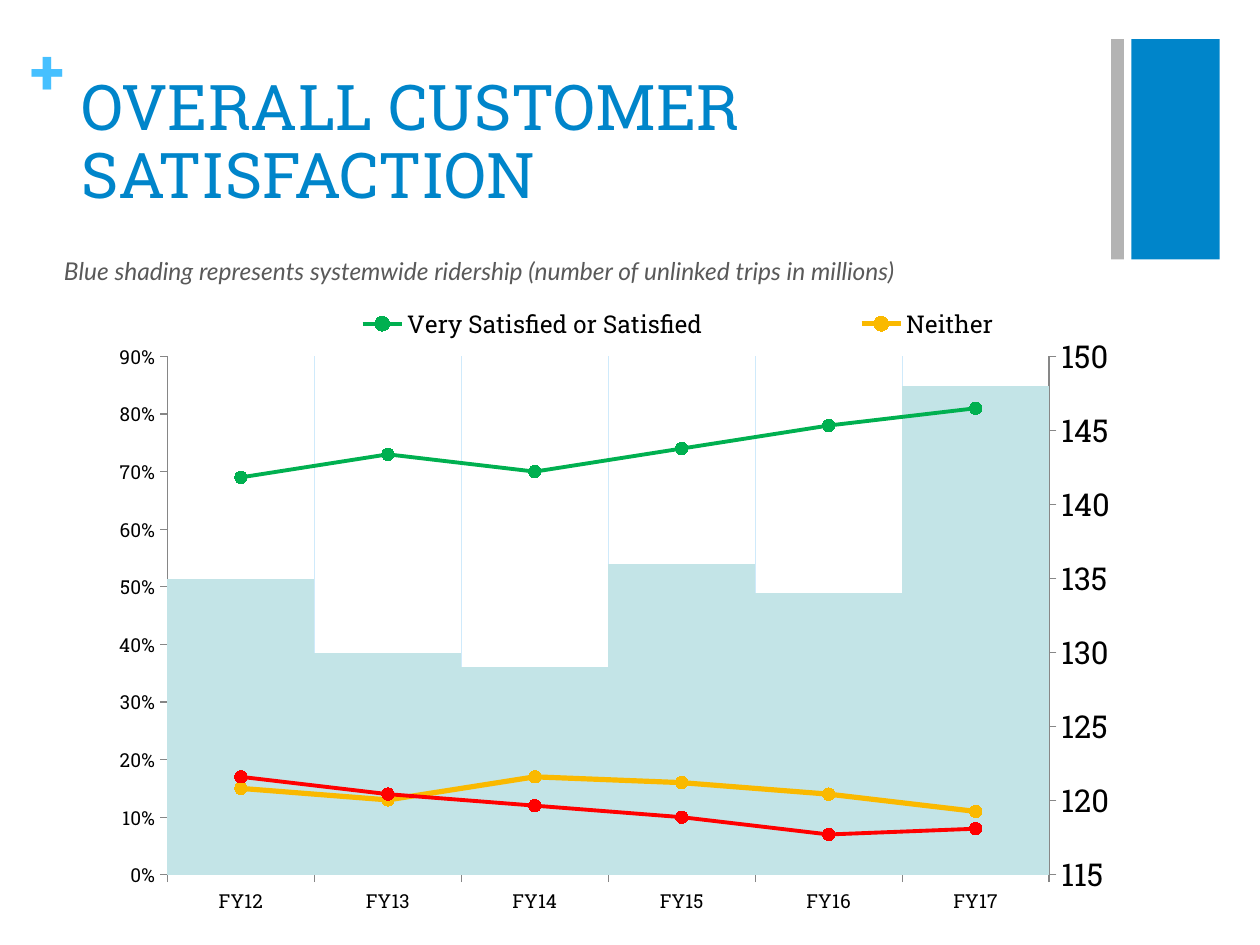
import copy
import pptx
import pptx.chart.axis
import pptx.chart.data
import pptx.dml.color
import pptx.enum.chart
import pptx.enum.shapes
import pptx.enum.text
import pptx.oxml
import pptx.oxml.ns
import pptx.util

Pt = pptx.util.Pt
qn = pptx.oxml.ns.qn
chart_enum = pptx.enum.chart
Anchor = pptx.enum.text.MSO_ANCHOR

THEME = {
    "blue": "0085CA", "sky": "46C0FF", "gray": "B3B3B3", "note": "595959",
    "black": "000000", "axis": "868686", "grid": "CFEAFB", "bars": "C3E4E7",
    "slab": "Roboto Slab", "sans": "Lato",
    "title_size": 36, "note_size": 14, "legend_size": 14, "axis_size": 11,
}

TITLE = "OVERALL CUSTOMER SATISFACTION"
NOTE = "Blue shading represents systemwide ridership (number of unlinked trips in millions)"
BANDS = [("blue", (646.5, 22.3, 50.5, 126)), ("gray", (635, 22.3, 7.3, 126))]
YEARS = ["FY12", "FY13", "FY14", "FY15", "FY16", "FY17"]
RIDERSHIP = ("Series 1", [135, 130, 129, 136, 134, 148])
RATINGS = [
    ("Very Satisfied or Satisfied", [0.69, 0.73, 0.70, 0.74, 0.78, 0.81], "00B050", 2.25),
    ("Neither", [0.15, 0.13, 0.17, 0.16, 0.14, 0.11], "FAB900", 3),
    ("Very Dissatisfied or Dissatisfied", [0.17, 0.14, 0.12, 0.10, 0.07, 0.08], "FF0000", 2.25),
]
PLOT_LAYOUT = {"x": 0.067, "y": 0.102, "w": 0.886, "h": 0.823}
LEGEND_LAYOUT = {"x": 0.18, "y": 0.02, "w": 0.8, "h": 0.06}


def color(name):
    return pptx.dml.color.RGBColor.from_string(THEME.get(name, name))


def apply(target, values):
    for name, value in values.items():
        setattr(target, name, value)


def style_font(font, name, size, fill, **extra):
    apply(font, {"name": THEME[name], "size": Pt(size), **extra})
    font.color.rgb = color(fill)


def style_line(line, fill, width):
    line.color.rgb = color(fill)
    line.width = Pt(width)


def style_fill(fill_format, fill):
    fill_format.solid()
    fill_format.fore_color.rgb = color(fill)


def write(shape, text, box, frame_values, font_values, **extra):
    apply(shape, dict(zip(("left", "top", "width", "height"), map(Pt, box))))
    frame = shape.text_frame
    frame.text = text
    apply(frame, {"word_wrap": True, **frame_values})
    paragraph = frame.paragraphs[0]
    paragraph.alignment = pptx.enum.text.PP_ALIGN.LEFT
    style_font(paragraph.font, *font_values, **extra)
    return paragraph


def chart_element(tag, value=None):
    element = pptx.oxml.parse_xml(f'<c:{tag} {pptx.oxml.ns.nsdecls("c")}/>')
    if value is not None:
        element.set("val", str(value))
    return element


def remove_children(parent, tag):
    for child in parent.findall(qn(f"c:{tag}")):
        parent.remove(child)


def manual_layout(position, inner=False):
    layout = chart_element("layout")
    manual = chart_element("manualLayout")
    layout.append(manual)
    if inner:
        manual.append(chart_element("layoutTarget", "inner"))
    for tag in ("xMode", "yMode"):
        manual.append(chart_element(tag, "edge"))
    for tag, value in position.items():
        manual.append(chart_element(tag, value))
    return layout


def set_value(parent, tag, value):
    parent.find(qn(f"c:{tag}")).set("val", str(value))


def split_lines(plot_area):
    bar_chart = plot_area.find(qn("c:barChart"))
    line_chart = chart_element("lineChart")
    line_chart.append(chart_element("grouping", "standard"))
    line_chart.append(chart_element("varyColors", 0))
    for series in bar_chart.findall(qn("c:ser"))[1:]:
        remove_children(series, "invertIfNegative")
        line_chart.append(series)
    line_chart.append(chart_element("marker", 1))
    bar_chart.addnext(line_chart)

    category = plot_area.find(qn("c:catAx"))
    value = plot_area.find(qn("c:valAx"))
    line_category, line_value = copy.deepcopy(category), copy.deepcopy(value)
    for axis, own, other in ((line_category, 5001, 5002), (line_value, 5002, 5001)):
        set_value(axis, "axId", own)
        set_value(axis, "crossAx", other)
        line_chart.append(chart_element("axId", own))
    value.addnext(line_value)
    line_value.addnext(line_category)
    set_value(line_category, "delete", 1)
    set_value(value, "axPos", "r")
    set_value(value, "crosses", "max")
    return pptx.chart.axis.ValueAxis(line_value)


def style_axis(axis):
    axis.major_tick_mark = chart_enum.XL_TICK_MARK.OUTSIDE
    axis.minor_tick_mark = chart_enum.XL_TICK_MARK.NONE
    style_font(axis.tick_labels.font, "slab", THEME["axis_size"], "black")
    style_line(axis.format.line, "axis", 0.75)


def add_satisfaction_chart(slide):
    data = pptx.chart.data.CategoryChartData()
    data.categories = YEARS
    data.add_series(*RIDERSHIP, number_format="0")
    for name, values, fill, width in RATINGS:
        data.add_series(name, values, number_format="0%")
    chart = slide.shapes.add_chart(
        chart_enum.XL_CHART_TYPE.COLUMN_CLUSTERED,
        Pt(57.6), Pt(167), Pt(576.7), Pt(360), data).chart
    chart.has_title = False
    style_font(chart.font, "slab", 18, "black")
    chart.value_axis.has_major_gridlines = False
    plot_area = chart.element.find(".//" + qn("c:plotArea"))
    rating_axis = split_lines(plot_area)
    remove_children(plot_area, "layout")
    plot_area.insert(0, manual_layout(PLOT_LAYOUT, inner=True))

    bars, lines = chart.plots
    apply(bars, {"gap_width": 0, "overlap": -4, "vary_by_categories": False})
    style_fill(bars.series[0].format.fill, "bars")
    for series, (name, values, fill, width) in zip(lines.series, RATINGS):
        series.smooth = False
        style_line(series.format.line, fill, width)
        apply(series.marker, {"style": chart_enum.XL_MARKER_STYLE.CIRCLE, "size": 7})
        style_fill(series.marker.format.fill, fill)
        style_line(series.marker.format.line, fill, 0.75)

    scales = [(chart.value_axis, 115, 150, 5, "0"), (rating_axis, 0, 0.9, 0.1, "0%")]
    for axis, low, high, step, number_format in scales:
        apply(axis, {"minimum_scale": low, "maximum_scale": high, "major_unit": step})
        apply(axis.tick_labels, {"number_format": number_format, "number_format_is_linked": False})
        style_axis(axis)
    style_axis(chart.category_axis)
    chart.category_axis.has_major_gridlines = True
    style_line(chart.category_axis.major_gridlines.format.line, "grid", 0.75)

    chart.has_legend = True
    apply(chart.legend, {"position": chart_enum.XL_LEGEND_POSITION.BOTTOM, "include_in_layout": False})
    style_font(chart.legend.font, "slab", THEME["legend_size"], "black")
    legend = chart.element.find(".//" + qn("c:legend"))
    remove_children(legend, "layout")
    hidden = chart_element("legendEntry")
    hidden.extend([chart_element("idx", 0), chart_element("delete", 1)])
    legend.find(qn("c:legendPos")).addnext(hidden)
    hidden.addnext(manual_layout(LEGEND_LAYOUT))


def main():
    presentation = pptx.Presentation()
    apply(presentation, {"slide_width": Pt(720), "slide_height": Pt(540)})
    slide = presentation.slides.add_slide(presentation.slide_layouts[5])
    for fill, box in BANDS:
        band = slide.shapes.add_shape(pptx.enum.shapes.MSO_SHAPE.RECTANGLE, *map(Pt, box))
        band.shadow.inherit = False
        style_fill(band.fill, fill)
        band.line.fill.background()

    no_margins = dict.fromkeys(("margin_left", "margin_top", "margin_right", "margin_bottom"), 0)
    plus = slide.shapes.add_textbox(0, 0, 0, 0)
    write(plus, "+", (17.3, 18, 21, 44), no_margins, ("slab", THEME["title_size"], "sky"), bold=True)
    title = write(slide.shapes.title, TITLE, (39.6, 38.2, 594.7, 87.8),
                  {"vertical_anchor": Anchor.MIDDLE}, ("slab", THEME["title_size"], "blue"))
    title.line_spacing = 0.9
    note = slide.shapes.add_textbox(0, 0, 0, 0)
    write(note, NOTE, (29.5, 142.6, 571, 24.5), {}, ("sans", THEME["note_size"], "note"), italic=True)
    add_satisfaction_chart(slide)
    presentation.save("out.pptx")


if __name__ == "__main__":
    main()
